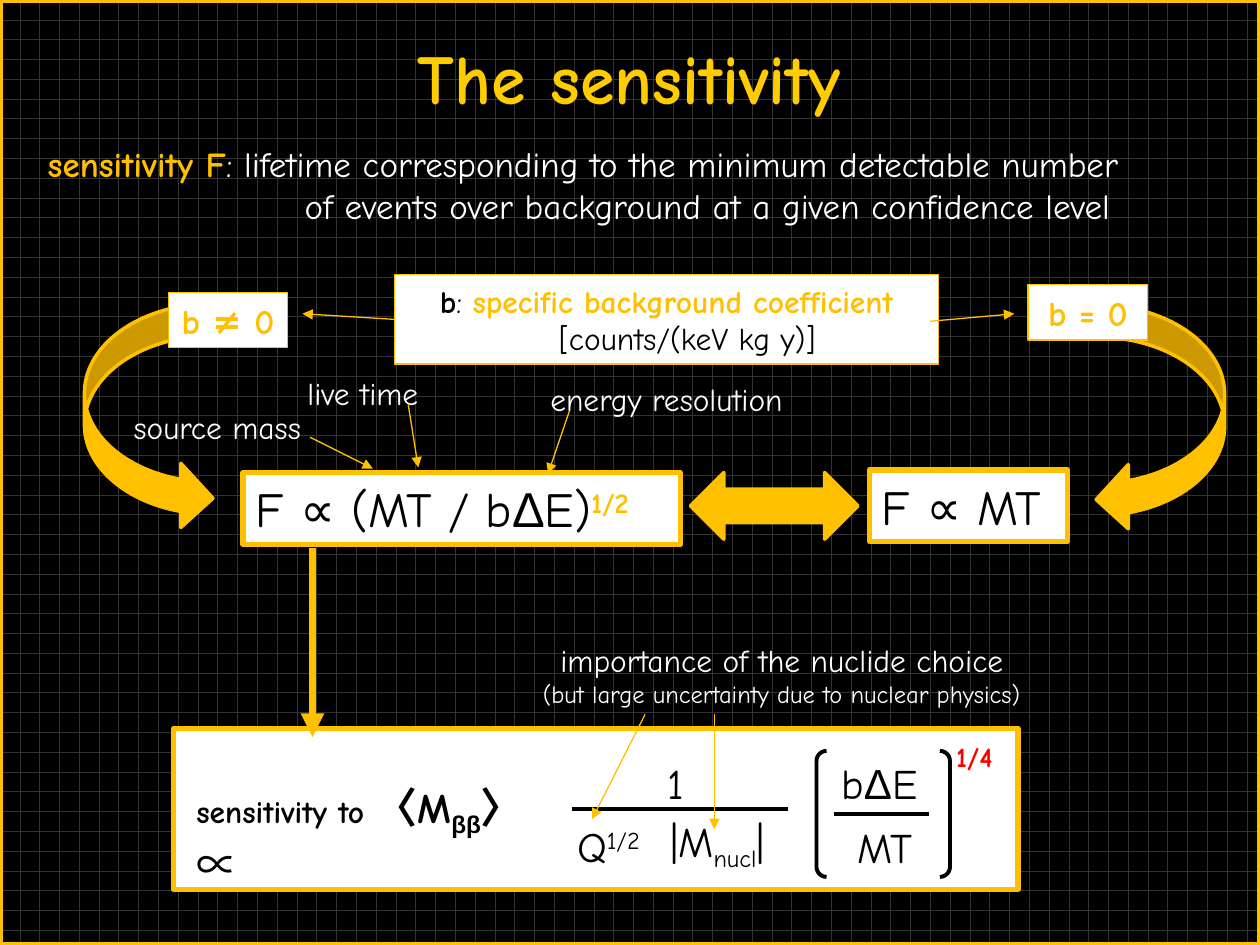
"""Build the slide on the sensitivity of a rare decay search."""
from typing import NamedTuple, Optional

from lxml import etree
from pptx import Presentation
from pptx.dml import color as col
from pptx.enum import dml, shapes, text
from pptx.oxml import ns
from pptx.util import Inches, Pt

GOLD, WHITE, BLACK = "FFC000", "FFFFFF", "000000"
FACE = "Comic Neue"
Kind = shapes.MSO_SHAPE


class Run(NamedTuple):
    text: str
    color: Optional[str] = None
    bold: Optional[bool] = None
    size: Optional[float] = None
    face: str = FACE
    base: int = 0


class Label(NamedTuple):
    box: tuple
    paras: list
    size: float = 24
    color: str = BLACK
    mid: bool = False


class Arrow(NamedTuple):
    start: tuple
    end: tuple
    color: str = GOLD
    width: float = 0.75
    head: bool = True


def rgb(code: str) -> col.RGBColor:
    return col.RGBColor.from_string(code)


def write(frame, paras, *, size=24, color=BLACK, bold=False, mid=False,
          indent=0, anchor=text.MSO_ANCHOR.TOP) -> None:
    frame.word_wrap = True
    frame.auto_size = text.MSO_AUTO_SIZE.NONE
    frame.vertical_anchor = anchor
    frame.margin_left = frame.margin_right = Inches(0.05 if mid else 0.1)
    frame.margin_top = frame.margin_bottom = Inches(0.05)
    for i, runs in enumerate(paras):
        para = frame.add_paragraph() if i else frame.paragraphs[0]
        para.alignment = text.PP_ALIGN.CENTER if mid else text.PP_ALIGN.LEFT
        if i and indent:
            props = para._p.get_or_add_pPr()
            props.set("marL", str(Inches(indent)))
            props.set("indent", "0")
        for item in runs:
            part = Run(item) if isinstance(item, str) else item
            run = para.add_run()
            run.text = part.text
            font = run.font
            font.name, font.size = part.face, Pt(part.size or size)
            font.bold = bold if part.bold is None else part.bold
            font.color.rgb = rgb(part.color or color)
            if part.base:
                run._r.get_or_add_rPr().set("baseline", str(part.base * 1000))


def shape(slide, kind, box, *, fill=None, line=GOLD, width=3.0, flip=False):
    item = slide.shapes.add_shape(kind, *map(Inches, box))
    item.shadow.inherit = False
    if fill:
        item.fill.solid()
        item.fill.fore_color.rgb = rgb(fill)
    else:
        item.fill.background()
    item.line.color.rgb = rgb(line)
    item.line.width = Pt(width)
    if flip:
        item.element.spPr.get_or_add_xfrm().set("flipH", "1")
    return item


def panel(slide, box, paras, *, width=0.75, **style):
    item = shape(slide, Kind.RECTANGLE, box, fill=WHITE, width=width)
    write(item.text_frame, paras, anchor=text.MSO_ANCHOR.MIDDLE, **style)
    return item


def label(slide, item: Label, **style) -> None:
    frame = slide.shapes.add_textbox(*map(Inches, item.box)).text_frame
    write(frame, item.paras, size=item.size, color=item.color,
          mid=item.mid, **style)


def arrow(slide, item: Arrow):
    ends = map(Inches, item.start + item.end)
    link = slide.shapes.add_connector(shapes.MSO_CONNECTOR.STRAIGHT, *ends)
    link.line.color.rgb = rgb(item.color)
    link.line.width = Pt(item.width)
    if item.head:
        tail = etree.SubElement(link.line._get_or_add_ln(), ns.qn("a:tailEnd"))
        tail.set("type", "triangle")
    etree.SubElement(link.element.spPr, ns.qn("a:effectLst"))
    return link


def intro(slide) -> None:
    title = slide.shapes.title
    title.left, title.top, title.width, title.height = map(
        Inches, (0.51, 0.22, 8.97, 1.25))
    write(title.text_frame, [["The sensitivity"]], size=40, color="FFCC00",
          bold=True, mid=True)
    shape(slide, Kind.RECTANGLE, (0, 0, 10, 7.5))
    lines = [[Run("sensitivity F", GOLD, True),
              ": lifetime corresponding to the minimum detectable number"],
             ["of events over background at a given confidence level"]]
    label(slide, Label((0.28, 1.08, 9.71, 0.77), lines, 20, WHITE),
          indent=2.04)


def mass(slide) -> None:
    shape(slide, Kind.RECTANGLE, (1.38, 5.78, 6.7, 1.28), fill=WHITE)
    bra = [Run("sensitivity to ", size=18), "〈M",
           Run("ββ", face="Arial", base=-25), "〉 ", Run("∝", bold=False)]
    label(slide, Label((1.46, 6.15, 3.08, 0.51), [bra]), bold=True)
    for item in (
        Label((4.02, 5.04, 4.37, 0.64),
              [["importance of the nuclide choice"],
               [Run("(but large uncertainty due to nuclear physics)",
                    size=14)]], 18, WHITE, True),
        Label((5.2, 5.96, 0.35, 0.51), [["1"]]),
        Label((6.58, 5.96, 0.82, 0.51), [["b", Run("Δ", face="Arial"), "E"]]),
        Label((6.71, 6.47, 0.73, 0.51), [["MT"]]),
        Label((4.37, 6.46, 0.95, 0.51), [[" Q", Run("1/2", base=30)]]),
        Label((5.22, 6.42, 1.2, 0.51), [["|M", Run("nucl", base=-25), "|"]]),
        Label((7.49, 5.82, 0.59, 0.37), [[Run("1/4", bold=True)]],
              16, "FF0000"),
    ):
        label(slide, item)
    for left, flip in ((6.48, False), (7.46, True)):
        side = shape(slide, Kind.LEFT_BRACKET, (left, 5.96, 0.08, 1),
                     line=BLACK, width=2.25, flip=flip)
        side.adjustments[0] = 1
    for item in (
        Arrow((4.54, 6.42), (6.25, 6.42), BLACK, 2.25, False),
        Arrow((6.62, 6.46), (7.37, 6.46), BLACK, 2.25, False),
        Arrow((2.48, 4.35), (2.48, 5.85), width=4.5),
        Arrow((5.12, 5.67), (4.7, 6.5)),
        Arrow((5.67, 5.67), (5.67, 6.58)),
    ):
        arrow(slide, item)


def limits(slide) -> None:
    for kind, box, flip in (
        (Kind.CURVED_RIGHT_ARROW, (0.67, 2.41, 1.02, 1.8), False),
        (Kind.CURVED_RIGHT_ARROW, (8.7, 2.42, 1.02, 1.8), True),
        (Kind.LEFT_RIGHT_ARROW, (5.48, 3.75, 1.33, 0.53), False),
    ):
        shape(slide, kind, box, fill=GOLD, width=2, flip=flip)
    root = ["F ∝ (MT / b", Run("Δ", face="Arial"), "E)",
            Run("1/2", GOLD, True, base=30)]
    panel(slide, (1.93, 3.75, 3.47, 0.57), [root], width=3, size=28)
    panel(slide, (6.9, 3.73, 1.57, 0.57), [["F ∝ MT"]], width=3, size=28)
    for name, box, start, end in (
        ("energy resolution", (4.17, 2.97, 2.24, 0.4),
         (4.52, 3.26), (4.35, 3.76)),
        ("live time", (2.28, 2.92, 1.2, 0.4), (3.24, 3.21), (3.32, 3.71)),
        ("source mass", (0.91, 3.19, 1.63, 0.4), (2.46, 3.47), (2.96, 3.72)),
    ):
        label(slide, Label(box, [[name]], 18, WHITE, True))
        arrow(slide, Arrow(start, end))


def cases(slide) -> None:
    for name, box in (("b = 0", (8.16, 2.26, 0.95, 0.44)),
                      ("b ≠ 0", (1.34, 2.32, 0.94, 0.44))):
        panel(slide, box, [[name]], size=20, color=GOLD, bold=True, mid=True)
    lines = [[Run("b", bold=True), ": ",
              Run("specific background coefficient", GOLD, True)],
             ["[counts/(keV kg y)]"]]
    hub = panel(slide, (3.13, 2.18, 4.32, 0.71), lines, size=18, mid=True,
                indent=0.33)
    arrow(slide, Arrow((3.13, 2.54), (2.4, 2.49))).begin_connect(hub, 1)
    arrow(slide, Arrow((7.38, 2.55), (8.05, 2.49)))


def main() -> None:
    deck = Presentation()
    deck.slide_width, deck.slide_height = Inches(10), Inches(7.5)
    slide = deck.slides.add_slide(deck.slide_layouts[5])
    fill = slide.background.fill
    fill.patterned()
    fill.pattern = dml.MSO_PATTERN.DOTTED_GRID
    fill.fore_color.rgb, fill.back_color.rgb = rgb("333333"), rgb(BLACK)
    for draw in (intro, mass, limits, cases):
        draw(slide)
    deck.save("out.pptx")


if __name__ == "__main__":
    main()
